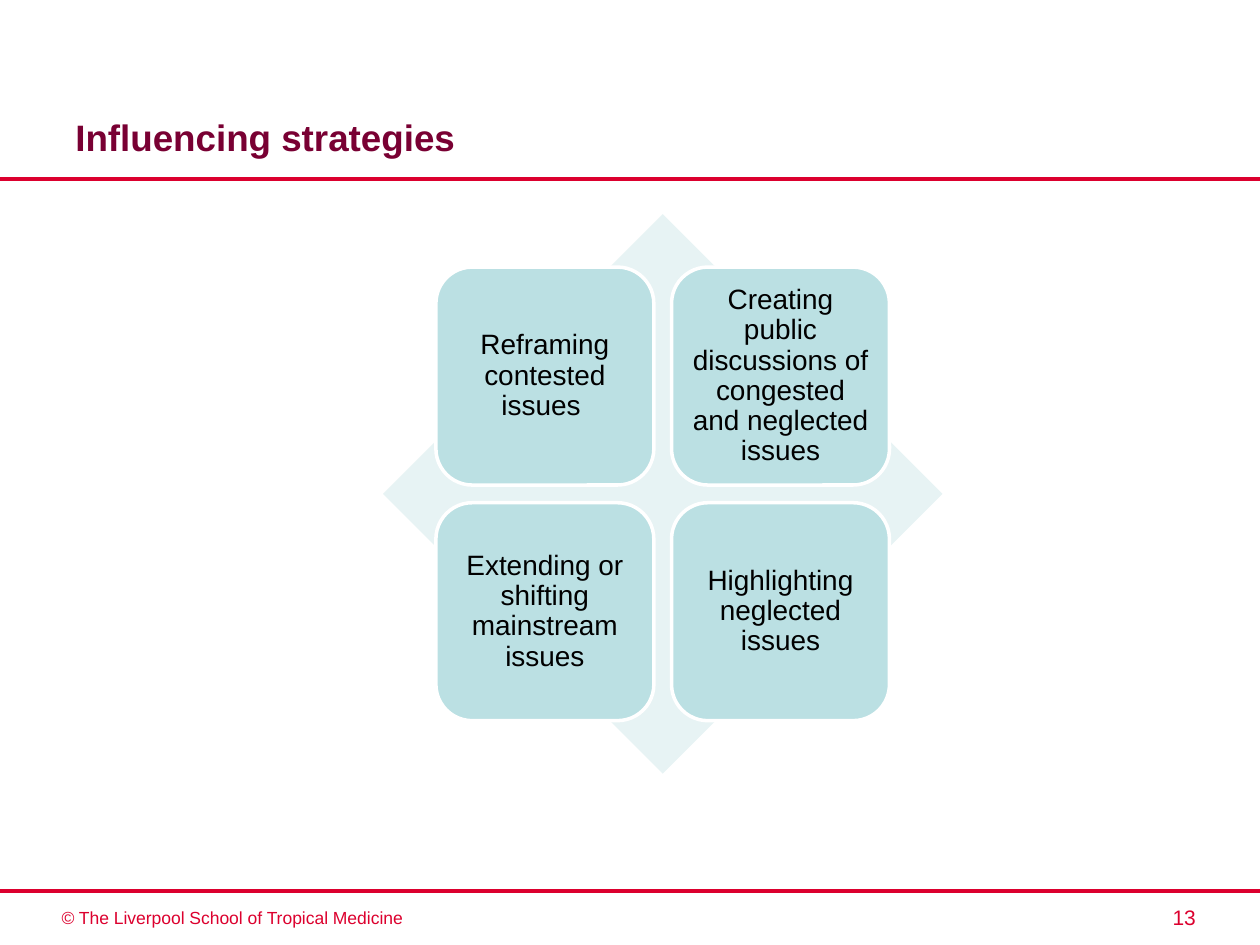
"""Build the influencing strategies slide with a four-part matrix."""
import lxml.etree
import pptx
import pptx.dml.color
import pptx.enum.shapes
import pptx.enum.text
import pptx.oxml.ns
import pptx.util

Inches = pptx.util.Inches
Pt = pptx.util.Pt
SHAPE = pptx.enum.shapes.MSO_SHAPE
ALIGN = pptx.enum.text.PP_ALIGN
ANCHOR = pptx.enum.text.MSO_ANCHOR

STRATEGIES = [
    ["Reframing contested issues ", "Creating public discussions of congested and neglected issues"],
    ["Extending or shifting mainstream issues", "Highlighting neglected issues"],
]
TEXTS = [
    ("Influencing strategies", (0.5, 0.3, 9, 1.01), "title", ALIGN.LEFT, ANCHOR.BOTTOM),
    ("© The Liverpool School of Tropical Medicine", (0.39, 7.15, 3.95, 0.27), "footer", ALIGN.LEFT, ANCHOR.TOP),
    ("13", (7.76, 7.13, 1.83, 0.3), "number", ALIGN.RIGHT, ANCHOR.TOP),
]
RULES = [1.42, 7.07]
DIAMOND = (3.04, 1.7, 4.44, 4.44)
TILE_LEFT, TILE_TOP, TILE_SIZE, TILE_STEP = 3.46, 2.12, 1.73, 1.87
TILE_INSET = 0.07

THEME = {
    "rule": "DC002E", "diamond": "E7F3F4", "tile": "BBE0E3", "tile_line": "FFFFFF",
    "title": {"size": 21, "color": "790033", "bold": True},
    "footer": {"size": 10, "color": "DC002E", "bold": False},
    "number": {"size": 12, "color": "DC002E", "bold": False},
    "label": {"size": 16, "color": "000000", "bold": False},
}


def rgb(value):
    return pptx.dml.color.RGBColor.from_string(value)


def write(tf, text, style, align, anchor, **paragraph):
    look = THEME[style]
    tf.word_wrap = True
    tf.vertical_anchor = anchor
    p = tf.paragraphs[0]
    for name, value in {"alignment": align, **paragraph}.items():
        setattr(p, name, value)
    r = p.add_run()
    r.text = text
    for name, value in {"name": "Arial", "size": Pt(look["size"]), "bold": look["bold"]}.items():
        setattr(r.font, name, value)
    r.font.color.rgb = rgb(look["color"])


def add_rule(s, y):
    line = s.shapes.add_connector(
        pptx.enum.shapes.MSO_CONNECTOR.STRAIGHT, 0, Inches(y), Inches(10), Inches(y))
    line.line.color.rgb = rgb(THEME["rule"])
    line.line.width = Pt(2.25)
    lxml.etree.SubElement(line._element.spPr, pptx.oxml.ns.qn("a:effectLst"))


def add_block(s, kind, box, fill):
    sp = s.shapes.add_shape(kind, *map(Inches, box))
    sp.shadow.inherit = False
    sp.fill.solid()
    sp.fill.fore_color.rgb = rgb(THEME[fill])
    sp.line.fill.background()
    return sp


def add_tile(s, text, row, col):
    box = (TILE_LEFT + col * TILE_STEP, TILE_TOP + row * TILE_STEP, TILE_SIZE, TILE_SIZE)
    sp = add_block(s, SHAPE.ROUNDED_RECTANGLE, box, "tile")
    sp.line.color.rgb = rgb(THEME["tile_line"])
    sp.line.width = Pt(2)
    for side in ("left", "top", "right", "bottom"):
        setattr(sp.text_frame, f"margin_{side}", Inches(TILE_INSET))
    write(sp.text_frame, text, "label", ALIGN.CENTER, ANCHOR.MIDDLE, line_spacing=0.9)


def main():
    prs = pptx.Presentation()
    prs.slide_width, prs.slide_height = Inches(10), Inches(7.5)
    s = prs.slides.add_slide(prs.slide_layouts[6])
    for y in RULES:
        add_rule(s, y)
    for text, box, style, align, anchor in TEXTS:
        sp = s.shapes.add_textbox(*map(Inches, box))
        write(sp.text_frame, text, style, align, anchor)
    add_block(s, SHAPE.DIAMOND, DIAMOND, "diamond")
    for row, labels in enumerate(STRATEGIES):
        for col, text in enumerate(labels):
            add_tile(s, text, row, col)
    prs.save("out.pptx")


if __name__ == "__main__":
    main()
